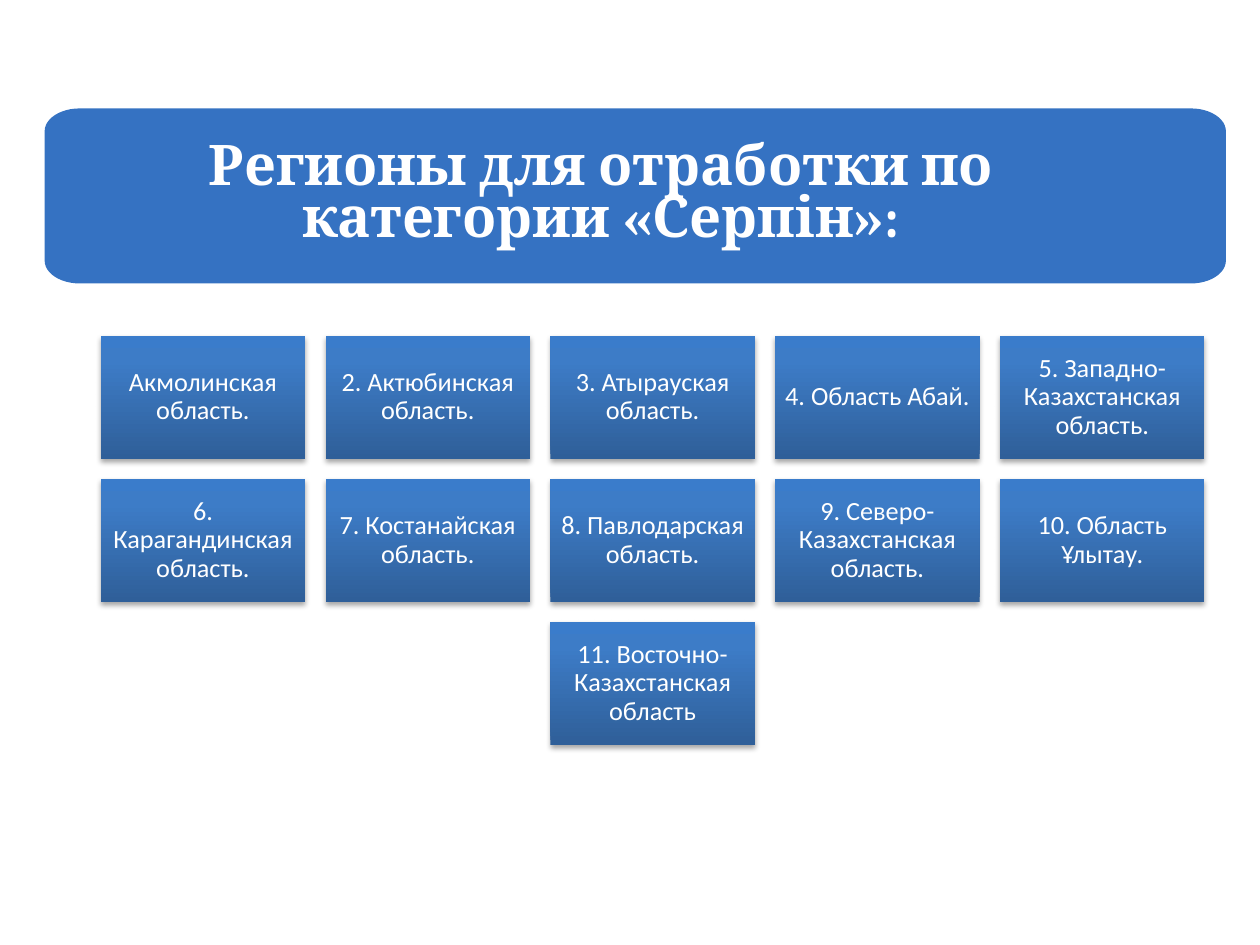
from math import cos, pi, sin

from lxml.etree import SubElement
from pptx import Presentation
from pptx.dml.color import RGBColor
from pptx.enum.shapes import MSO_SHAPE
from pptx.enum.text import MSO_ANCHOR, MSO_AUTO_SIZE, PP_ALIGN
from pptx.oxml.ns import qn
from pptx.util import Pt

REGIONS = [
    "Акмолинская область.",
    "2. Актюбинская область.",
    "3. Атырауская область.",
    "4. Область Абай.",
    "5. Западно-Казахстанская область.",
    "6. Карагандинская область.",
    "7. Костанайская область.",
    "8. Павлодарская область.",
    "9. Северо-Казахстанская область.",
    "10. Область Ұлытау.",
    "11. Восточно-Казахстанская область",
]
COLUMNS = 5


def color(value):
    return RGBColor.from_string(value)


def add_color(parent, value):
    return SubElement(parent, qn("a:srgbClr"), val=str(color(value)))


class SlideBuilder:
    heading_font = "Cambria"
    body_font = "Calibri"
    text_color = "FFFFFF"
    banner_color = "3572C2"
    gradient = [(0, "2F5F99"), (80, "3D7CC7"), (100, "3A7CCB")]

    def __init__(self, slide):
        self.slide = slide

    def set_text(self, frame, text, size, font, bold, line_spacing):
        frame.word_wrap = True
        frame.auto_size = MSO_AUTO_SIZE.NONE
        frame.vertical_anchor = MSO_ANCHOR.MIDDLE
        para = frame.paragraphs[0]
        para.alignment = PP_ALIGN.CENTER
        para.line_spacing = line_spacing
        span = para.add_run()
        span.text = text
        span.font.size = Pt(size)
        span.font.name = font
        span.font.bold = bold
        span.font.color.rgb = color(self.text_color)

    def banner(self, left, top, width, height, radius_x, radius_y, steps=12):
        corners = [
            (left + width - radius_x, top + height - radius_y),
            (left + radius_x, top + height - radius_y),
            (left + radius_x, top + radius_y),
            (left + width - radius_x, top + radius_y),
        ]
        points = []
        for quarter, (center_x, center_y) in enumerate(corners):
            for step in range(steps + 1):
                angle = (quarter + step / steps) * pi / 2
                points.append((Pt(center_x + radius_x * cos(angle)),
                               Pt(center_y + radius_y * sin(angle))))
        outline = self.slide.shapes.build_freeform(*points[0])
        outline.add_line_segments(points[1:], close=True)
        box = outline.convert_to_shape()
        box.shadow.inherit = False
        box.fill.solid()
        box.fill.fore_color.rgb = color(self.banner_color)
        box.line.fill.background()

    def title(self, text, left, top, width, height):
        box = self.slide.shapes.title
        box.left, box.top = Pt(left), Pt(top)
        box.width, box.height = Pt(width), Pt(height)
        self.set_text(box.text_frame, text, 32, self.heading_font, True, Pt(30))
        tree = box._element.getparent()
        tree.append(box._element)

    def tile(self, text, left, top, width, height):
        box = self.slide.shapes.add_shape(
            MSO_SHAPE.RECTANGLE, Pt(left), Pt(top), Pt(width), Pt(height))
        self.paint_tile(box)
        frame = box.text_frame
        frame.margin_left = frame.margin_right = Pt(4.5)
        frame.margin_top = frame.margin_bottom = Pt(4.5)
        self.set_text(frame, text, 15, self.body_font, False, 0.9)

    def paint_tile(self, box):
        properties = box._element.spPr
        fill = SubElement(properties, qn("a:gradFill"), rotWithShape="1")
        stops = SubElement(fill, qn("a:gsLst"))
        for position, value in self.gradient:
            add_color(SubElement(stops, qn("a:gs"), pos=str(position * 1000)), value)
        SubElement(fill, qn("a:lin"), ang="16200000", scaled="0")
        box.line.fill.background()
        effects = SubElement(properties, qn("a:effectLst"))
        shadow = SubElement(effects, qn("a:outerShdw"), blurRad=str(Pt(3.1)),
                            dist=str(Pt(1.8)), dir="5400000", rotWithShape="0")
        SubElement(add_color(shadow, "000000"), qn("a:alpha"), val="35000")

    def tile_grid(self, texts, left, top, width):
        height, gap = width * 0.6, width * 0.1
        for start in range(0, len(texts), COLUMNS):
            row = texts[start:start + COLUMNS]
            indent = (COLUMNS - len(row)) * (width + gap) / 2
            row_top = top + start // COLUMNS * (height + gap)
            for column, text in enumerate(row):
                self.tile(text, left + indent + column * (width + gap),
                          row_top, width, height)


def main():
    deck = Presentation()
    deck.slide_width, deck.slide_height = Pt(720), Pt(540)
    slide = deck.slides.add_slide(deck.slide_layouts[0])
    subtitle = slide.placeholders[1]._element
    subtitle.getparent().remove(subtitle)

    builder = SlideBuilder(slide)
    builder.banner(25.5, 62, 675, 100, 20, 13)
    builder.title("Регионы для отработки по категории «Серпін»:", 111, 83.5, 465, 57.5)
    builder.tile_grid(REGIONS, 57.6, 192, 116.8)
    deck.save("out.pptx")


if __name__ == "__main__":
    main()
